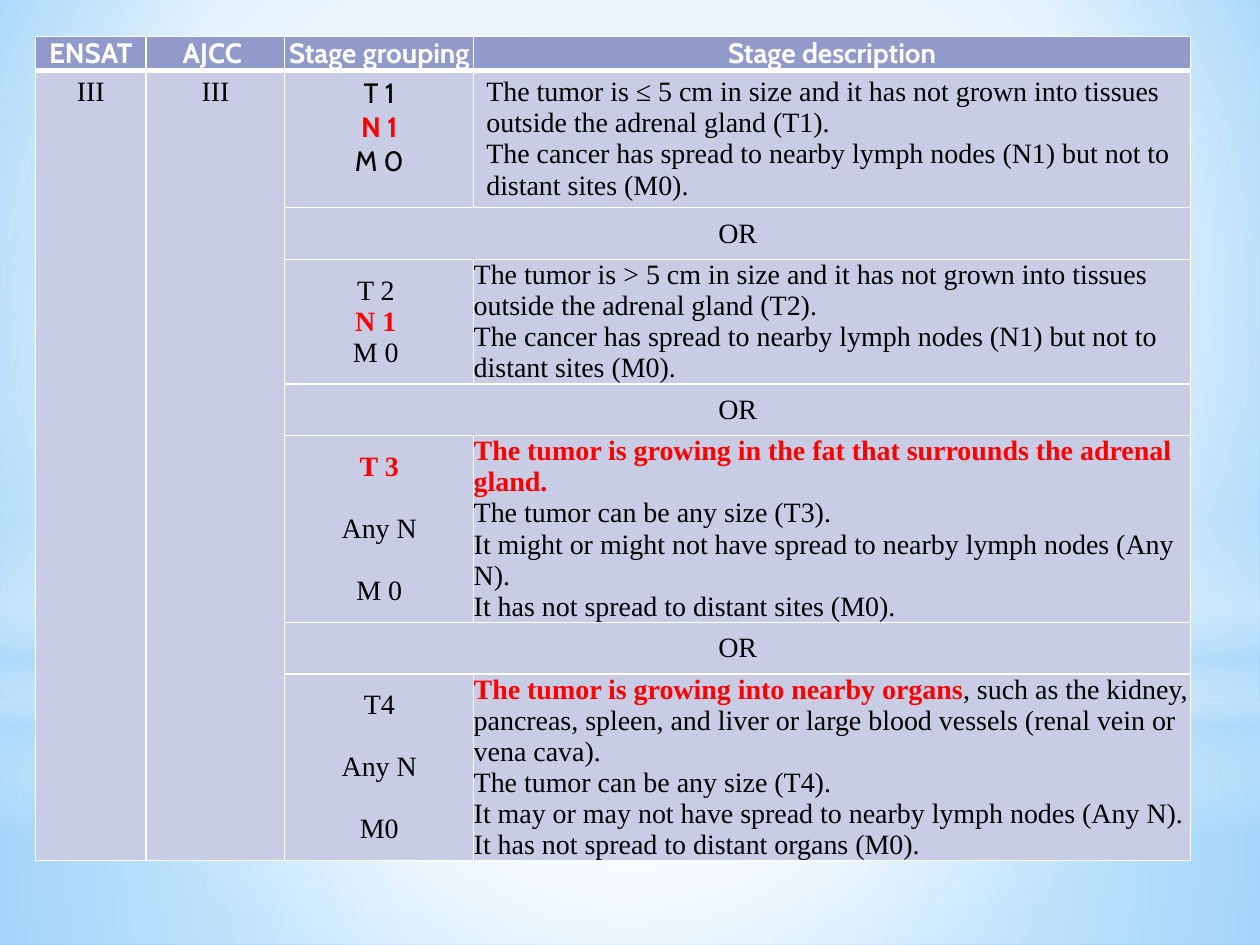
import pptx
import pptx.dml.color
import pptx.enum.shapes
import pptx.enum.text
import pptx.oxml
import pptx.oxml.ns
import pptx.util

ANCHOR = pptx.enum.text.MSO_ANCHOR
ALIGN = pptx.enum.text.PP_ALIGN
SHAPES = pptx.enum.shapes.MSO_SHAPE
qn = pptx.oxml.ns.qn
Inches, Pt = pptx.util.Inches, pptx.util.Pt

WIDTH, HEIGHT = 10, 7.5
SERIF, SANS = "Times New Roman", "Cabin"
WHITE, BLACK, RED, SKY = "FFFFFF", "000000", "FF0000", "B4DCFA"
HEADER_FILL, BODY_FILL = "919ACA", "C8CDE5"
TEXT_SIZE, LINE_HEIGHT = 16, 17.75

# Gradient stops are (position %, colour, opacity %); a focus is left, top, right, bottom in %.
CENTRE = (50, 50, 50, 50)
BACKDROP = [(0, "9ED5FF", 100), (60, WHITE, 100), (100, "5BB9FF", 100)]
HAZE = [
    (SHAPES.RECTANGLE, 5.58, 1.92, [(0, WHITE, 91), (37, WHITE, 76), (100, SKY, 79)], CENTRE),
    (SHAPES.RECTANGLE, 0, 5.58, [(0, WHITE, 89), (48, WHITE, 62), (100, SKY, 79)], CENTRE),
    (SHAPES.RECTANGLE, 4.12, 2.5, [(0, WHITE, 0), (29, WHITE, 30), (45, SKY, 40),
                                   (55, WHITE, 26), (65, SKY, 60), (100, WHITE, 0)], None),
    (SHAPES.OVAL, 1.75, 5.58, [(0, WHITE, 100), (56, WHITE, 0)], CENTRE),
]

# Text between ** marks is red and bold.
HEADINGS = ["ENSAT", "AJCC ", "Stage grouping", "Stage description"]
STAGE = "III"
LYMPH_NODES = "The cancer has spread to nearby lymph nodes (N1) but not to distant sites (M0)."
GROUPS = [
    (["T 1", "**N 1**", "M 0"],
     ["The tumor is ≤ 5 cm in size and it has not grown into tissues outside the adrenal gland (T1).",
      LYMPH_NODES]),
    (["T 2 ", "**N 1 **", "M 0 "],
     ["The tumor is > 5 cm in size and it has not grown into tissues outside the adrenal gland (T2).",
      LYMPH_NODES]),
    (["**T 3**", "Any N", "M 0"],
     ["**The tumor is growing in the fat that surrounds the adrenal gland.**",
      "The tumor can be any size (T3).",
      "It might or might not have spread to nearby lymph nodes (Any N).",
      "It has not spread to distant sites (M0)."]),
    (["T4", "Any N", "M0"],
     ["**The tumor is growing into nearby organs**, such as the kidney, pancreas, spleen, "
      "and liver or large blood vessels (renal vein or vena cava).",
      "The tumor can be any size (T4).",
      "It may or may not have spread to nearby lymph nodes (Any N).",
      "It has not spread to distant organs (M0)."]),
]
SEPARATOR = "OR"

TABLE_LEFT, TABLE_TOP = 0.28, 0.29
COLUMNS = [0.88, 1.1, 1.5, 5.69]
HEADER_ROW, SEPARATOR_ROW = 0.26, 0.41
GROUP_ROWS = [1.09, 0.99, 1.48, 1.48]


def rgb(colour):
    return pptx.dml.color.RGBColor.from_string(colour)


def set_gradient(fill, owner, stops, focus):
    """Radial gradient around a focus, or top to bottom when there is none."""
    fill.gradient()
    grad = owner.find(".//" + qn("a:gradFill"))
    stop_xml = "".join(
        f'<a:gs pos="{pos * 1000}"><a:srgbClr val="{colour}">'
        f'<a:alpha val="{opacity * 1000}"/></a:srgbClr></a:gs>'
        for pos, colour, opacity in stops)
    if focus:
        sides = " ".join(f'{side}="{share * 1000}"' for side, share in zip("ltrb", focus))
        direction = f'<a:path path="circle"><a:fillToRect {sides}/></a:path>'
    else:
        direction = '<a:lin ang="5400000" scaled="0"/>'
    grad.getparent().replace(grad, pptx.oxml.parse_xml(
        f'<a:gradFill {pptx.oxml.ns.nsdecls("a")} rotWithShape="1">'
        f'<a:gsLst>{stop_xml}</a:gsLst>{direction}</a:gradFill>'))


def write(cell, paragraphs, font=SERIF, colour=BLACK, bold=False,
          align=ALIGN.CENTER, gap=0, tight=True):
    """Fill a cell with text; tight means no margins and middle anchoring."""
    if tight:
        cell.margin_left = cell.margin_right = cell.margin_top = cell.margin_bottom = 0
        cell.vertical_anchor = ANCHOR.MIDDLE
    frame = cell.text_frame
    for index, text in enumerate(paragraphs):
        paragraph = frame.add_paragraph() if index else frame.paragraphs[0]
        paragraph.alignment = align
        if index and gap:
            paragraph.space_before = Pt(gap)
        for part, words in enumerate(text.split("**")):
            if words:
                marked = part % 2 == 1
                run = paragraph.add_run()
                run.text = words
                run.font.name, run.font.size = font, Pt(TEXT_SIZE)
                run.font.bold = bold or marked
                run.font.color.rgb = rgb(RED if marked else colour)


def dress(cell, fill, top=1, bottom=1):
    """Fill a cell and rule it in white, line widths in points."""
    cell.fill.solid()
    cell.fill.fore_color.rgb = rgb(fill)
    sides = [("L", 1), ("R", 1), ("T", top), ("B", bottom)]
    for index, (side, width) in enumerate(sides):
        cell._tc.tcPr.insert(index, pptx.oxml.parse_xml(
            f'<a:ln{side} {pptx.oxml.ns.nsdecls("a")} w="{Pt(width)}"><a:solidFill>'
            f'<a:srgbClr val="{WHITE}"/></a:solidFill></a:ln{side}>'))


def add_backdrop(slide):
    set_gradient(slide.background.fill, slide._element, BACKDROP, (20, 10, 20, 60))
    for kind, top, height, stops, focus in HAZE:
        haze = slide.shapes.add_shape(kind, 0, Inches(top), Inches(WIDTH), Inches(height))
        haze.shadow.inherit = False
        haze.line.fill.background()
        set_gradient(haze.fill, haze._element, stops, focus)


def add_staging(slide):
    rows = [HEADER_ROW, GROUP_ROWS[0]]
    for height in GROUP_ROWS[1:]:
        rows += [SEPARATOR_ROW, height]
    table = slide.shapes.add_table(
        len(rows), len(COLUMNS), Inches(TABLE_LEFT), Inches(TABLE_TOP),
        Inches(sum(COLUMNS)), Inches(sum(rows))).table
    for column, width in zip(table.columns, COLUMNS):
        column.width = Inches(width)
    for number, (row, height) in enumerate(zip(table.rows, rows)):
        row.height = Inches(height)
        for cell in row.cells:
            dress(cell, BODY_FILL if number else HEADER_FILL,
                  top=3 if number == 1 else 1, bottom=1 if number else 3)

    for column, heading in enumerate(HEADINGS):
        write(table.cell(0, column), [heading], font=SANS, colour=WHITE, bold=True)
    for column in (0, 1):
        table.cell(1, column).merge(table.cell(len(rows) - 1, column))
        write(table.cell(1, column), [STAGE], tight=False)

    for index, (grouping, description) in enumerate(GROUPS):
        row, first = 1 + 2 * index, index == 0
        write(table.cell(row, 2), grouping, font=SANS if first else SERIF,
              tight=not first, gap=LINE_HEIGHT if index >= 2 else 0)
        write(table.cell(row, 3), description, align=ALIGN.LEFT, tight=not first)
        if not first:
            table.cell(row - 1, 2).merge(table.cell(row - 1, 3))
            write(table.cell(row - 1, 2), [SEPARATOR])


def main():
    deck = pptx.Presentation()
    deck.slide_width, deck.slide_height = Inches(WIDTH), Inches(HEIGHT)
    slide = deck.slides.add_slide(deck.slide_layouts[6])
    add_backdrop(slide)
    add_staging(slide)
    deck.save("out.pptx")


if __name__ == "__main__":
    main()
